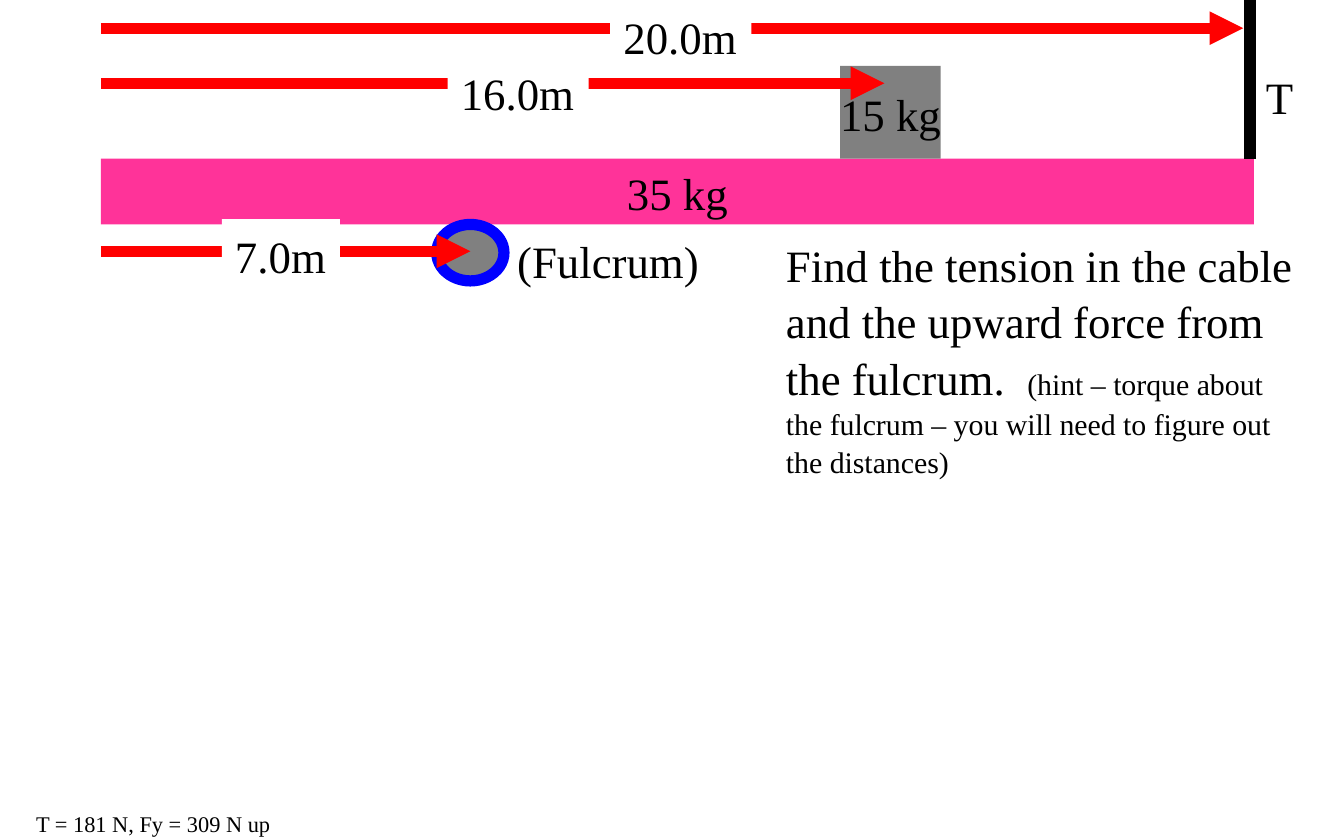
"""Build a torque problem slide: a loaded beam on a fulcrum, held by a cable."""
from typing import NamedTuple

from lxml.etree import SubElement
from pptx import Presentation
from pptx.dml.color import RGBColor
from pptx.enum.shapes import MSO_CONNECTOR as Connector, MSO_SHAPE as Shape
from pptx.enum.text import MSO_ANCHOR as Anchor, MSO_AUTO_SIZE as AutoSize, PP_ALIGN as Align
from pptx.oxml.ns import qn
from pptx.util import Inches, Pt

COLORS = {
    "text": "000000",
    "cable": "000000",
    "beam": "FF3399",
    "metal": "808080",
    "rim": "0000FF",
    "arrow": "FF0000",
    "paper": "FFFFFF",
}
FONT = "Times New Roman"
STROKE = Pt(6)
LINE_SPACING = 1.05
BEAM_LEFT, BEAM_TOP = 0.75, 1.18
LABEL_HEIGHT = 0.5


class Box(NamedTuple):
    left: float
    top: float
    width: float
    height: float


class Label(NamedTuple):
    text: str
    box: Box
    size: int = 24


class Distance(NamedTuple):
    end: float
    y: float
    label: Label


DISTANCES = [
    Distance(3.5, 1.87, Label("7.0m", Box(1.65, 1.63, 0.88, LABEL_HEIGHT))),
    Distance(6.58, 0.62, Label("16.0m", Box(3.33, 0.42, 1.05, LABEL_HEIGHT))),
    Distance(9.25, 0.21, Label("20.0m", Box(4.54, 0, 1.05, LABEL_HEIGHT))),
]
ANSWER = Label("T = 181 N, Fy = 309 N up", Box(0.17, 5.97, 1.96, 0.3), 12)
TENSION = Label("T", Box(9.32, 0.45, 0.41, LABEL_HEIGHT))
FULCRUM = Label("(Fulcrum)", Box(3.75, 1.67, 1.57, LABEL_HEIGHT))


def rgb(name: str) -> RGBColor:
    return RGBColor.from_string(COLORS[name])


def inches(box: Box) -> list:
    return [Inches(length) for length in box]


def style(paragraph, size: int) -> None:
    paragraph.line_spacing = LINE_SPACING
    paragraph.font.name = FONT
    paragraph.font.size = Pt(size)
    paragraph.font.color.rgb = rgb("text")


def add_label(slide, label: Label, fill: str = "") -> None:
    caption = slide.shapes.add_textbox(*inches(label.box))
    if fill:
        caption.fill.solid()
        caption.fill.fore_color.rgb = rgb(fill)
    frame = caption.text_frame
    frame.word_wrap = False
    frame.auto_size = AutoSize.SHAPE_TO_FIT_TEXT
    frame.text = label.text
    style(frame.paragraphs[0], label.size)


def add_body(slide, kind: Shape, box: Box, fill: str, mass: str = "", rim: str = "") -> None:
    body = slide.shapes.add_shape(kind, *inches(box))
    body.shadow.inherit = False
    body.fill.solid()
    body.fill.fore_color.rgb = rgb(fill)
    if rim:
        body.line.color.rgb = rgb(rim)
        body.line.width = STROKE
    else:
        body.line.fill.background()
    if mass:
        frame = body.text_frame
        frame.word_wrap = False
        frame.vertical_anchor = Anchor.MIDDLE
        frame.text = mass
        frame.paragraphs[0].alignment = Align.CENTER
        style(frame.paragraphs[0], 24)


def add_line(slide, start: tuple, end: tuple, color: str, arrow: bool = False) -> None:
    ends = [Inches(length) for length in (*start, *end)]
    line = slide.shapes.add_connector(Connector.STRAIGHT, *ends)
    line.line.color.rgb = rgb(color)
    line.line.width = STROKE
    if arrow:
        SubElement(line.line._get_or_add_ln(), qn("a:tailEnd"), type="triangle")
    SubElement(line._element.spPr, qn("a:effectLst"))


def add_distance(slide, distance: Distance) -> None:
    start, end = (BEAM_LEFT, distance.y), (distance.end, distance.y)
    add_line(slide, start, end, "arrow", arrow=True)
    add_label(slide, distance.label, fill="paper")


def add_problem(slide) -> None:
    frame = slide.shapes.add_textbox(*inches(Box(5.75, 1.7, 4, 1.85))).text_frame
    frame.word_wrap = True
    frame.auto_size = AutoSize.SHAPE_TO_FIT_TEXT
    frame.text = "Find the tension in the cable\nand the upward force from the fulcrum.  "
    for paragraph in frame.paragraphs:
        style(paragraph, 24)
    hint = frame.paragraphs[-1].add_run()
    hint.text = "(hint – torque about the fulcrum – you will need to figure out the distances)"
    hint.font.size = Pt(16)


def main() -> None:
    deck = Presentation()
    deck.slide_width, deck.slide_height = Inches(10), Inches(6.25)
    slide = deck.slides.add_slide(deck.slide_layouts[6])

    add_label(slide, ANSWER)
    add_body(slide, Shape.RECTANGLE, Box(BEAM_LEFT, BEAM_TOP, 8.58, 0.49), "beam", "35 kg")
    add_body(slide, Shape.OVAL, Box(3.25, 1.67, 0.5, 0.42), "metal", rim="rim")
    add_body(slide, Shape.RECTANGLE, Box(6.25, 0.49, 0.75, 0.69), "metal", "15 kg")
    add_line(slide, (9.3, BEAM_TOP), (9.3, 0), "cable")
    add_label(slide, TENSION)
    for distance in DISTANCES:
        add_distance(slide, distance)
    add_label(slide, FULCRUM)
    add_problem(slide)

    deck.save("out.pptx")


if __name__ == "__main__":
    main()
